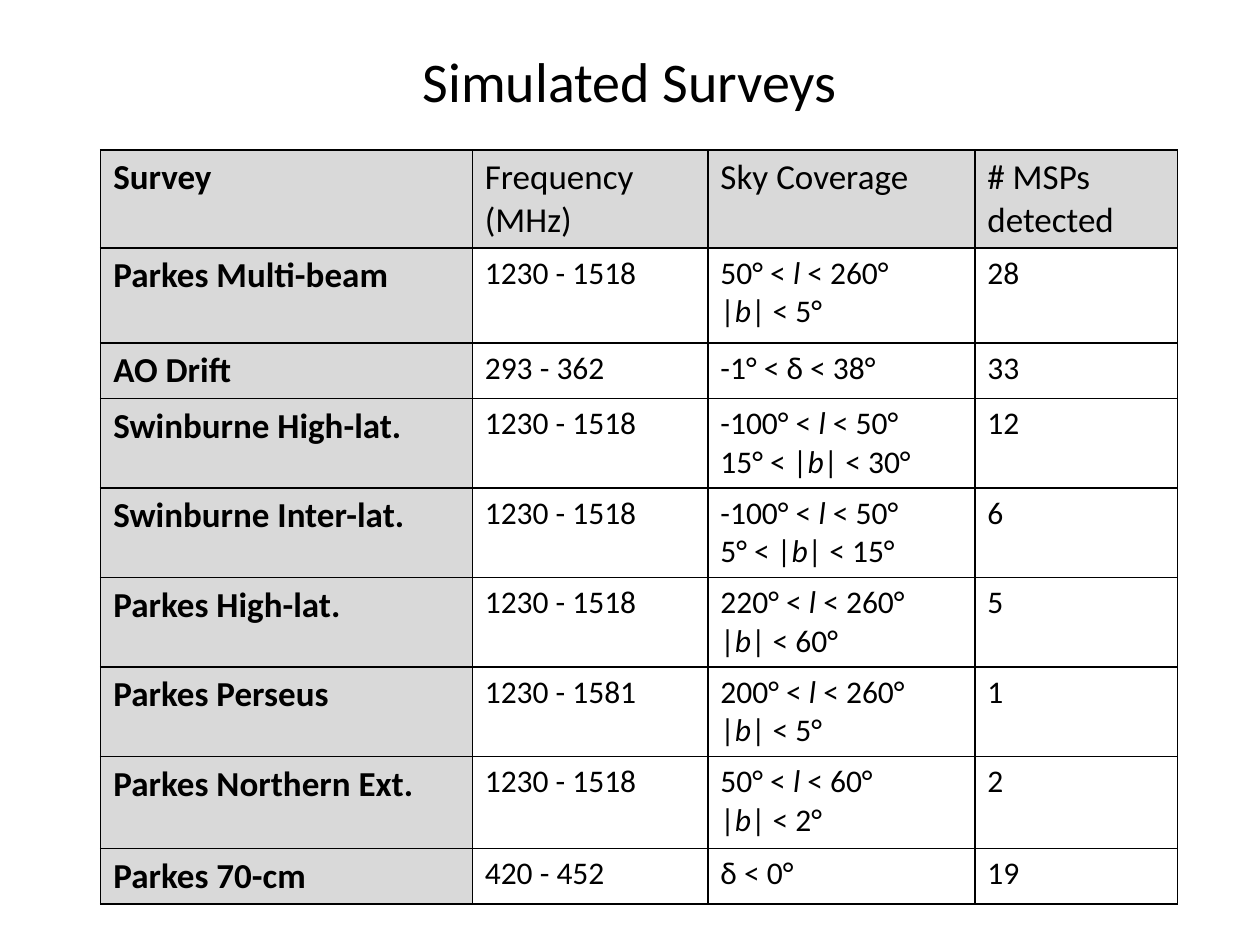
from lxml import etree
from pptx import Presentation, util as u
from pptx.dml import color
from pptx.enum import text
from pptx.oxml import ns

SURVEYS = [
    ("Survey", "Frequency\n(MHz)", "Sky Coverage", "# MSPs detected"),
    ("Parkes Multi-beam", "1230 - 1518", "50° < *l *< 260°\n|*b*| < 5°", "28"),
    ("AO Drift", "293 - 362", "-1° < δ < 38°", "33"),
    ("Swinburne High-lat.", "1230 - 1518", "-100° < *l *< 50°\n15° < |*b*| < 30°", "12"),
    ("Swinburne Inter-lat.", "1230 - 1518", "-100° < *l *< 50°\n5° < |*b*| < 15°", "6"),
    ("Parkes High-lat.", "1230 - 1518", "220° < *l *< 260°\n|*b*| < 60°", "5"),
    ("Parkes Perseus", "1230 - 1581", "200° < *l *< 260°\n|*b*| < 5°", "1"),
    ("Parkes Northern Ext.", "1230 - 1518", "50° < *l *< 60°\n|*b*| < 2°", "2"),
    ("Parkes 70-cm", "420 - 452", "δ < 0°", "19"),
]
COL_WIDTHS = [7.49, 4.75, 5.38, 4.09]
ROW_HEIGHTS = [1.04, 1.91, 1.04, 1.04, 1.04, 1.04, 1.04, 1.85, 1.04]


def rgb(value):
    return color.RGBColor.from_string(value)


class Deck:
    """Holds the slide style and draws each kind of element."""

    font, ink, shade, paper = "Calibri", "000000", "D9D9D9", "FFFFFF"

    def __init__(self, prs):
        self.s = prs.slides.add_slide(prs.slide_layouts[6])

    def add_text(self, tf, content, size, bold=False, align=text.PP_ALIGN.LEFT):
        for i, line in enumerate(content.split("\n")):
            p = tf.paragraphs[0] if i == 0 else tf.add_paragraph()
            p.alignment = align
            for j, part in enumerate(line.split("*")):
                r = p.add_run()
                r.text = part
                r.font.name = self.font
                r.font.size = u.Pt(size)
                r.font.bold = bold
                r.font.italic = j % 2 == 1
                r.font.color.rgb = rgb(self.ink)

    def title(self, content, left, top, width, height):
        sp = self.s.shapes.add_textbox(u.Cm(left), u.Cm(top), u.Cm(width), u.Cm(height))
        tf = sp.text_frame
        tf.word_wrap = True
        tf.vertical_anchor = text.MSO_ANCHOR.MIDDLE
        self.add_text(tf, content, 32, align=text.PP_ALIGN.CENTER)

    def border(self, cell):
        tc_pr = cell._tc.get_or_add_tcPr()
        for side in ("lnL", "lnR", "lnT", "lnB"):
            ln = etree.SubElement(tc_pr, ns.qn(f"a:{side}"), w=str(u.Pt(1)))
            fill = etree.SubElement(ln, ns.qn("a:solidFill"))
            etree.SubElement(fill, ns.qn("a:srgbClr"), val=self.ink)

    def table(self, rows, left, top, widths, heights):
        sp = self.s.shapes.add_table(len(rows), len(widths), u.Cm(left), u.Cm(top),
                                     u.Cm(sum(widths)), u.Cm(sum(heights)))
        table = sp.table
        table.first_row = table.horz_banding = False
        for col, width in zip(table.columns, widths):
            col.width = u.Cm(width)
        for row, height in zip(table.rows, heights):
            row.height = u.Cm(height)
        for i, values in enumerate(rows):
            for j, value in enumerate(values):
                cell = table.cell(i, j)
                heading = i == 0 or j == 0
                self.border(cell)
                cell.fill.solid()
                cell.fill.fore_color.rgb = rgb(self.shade if heading else self.paper)
                self.add_text(cell.text_frame, value, 20 if heading else 18, bold=j == 0)


def main():
    prs = Presentation()
    prs.slide_width, prs.slide_height = u.Cm(25.4), u.Cm(19.05)
    deck = Deck(prs)
    deck.table(SURVEYS, 2.03, 3.02, COL_WIDTHS, ROW_HEIGHTS)
    deck.title("Simulated Surveys", 1.27, 0.03, 22.86, 3.18)
    prs.save("out.pptx")


if __name__ == "__main__":
    main()
